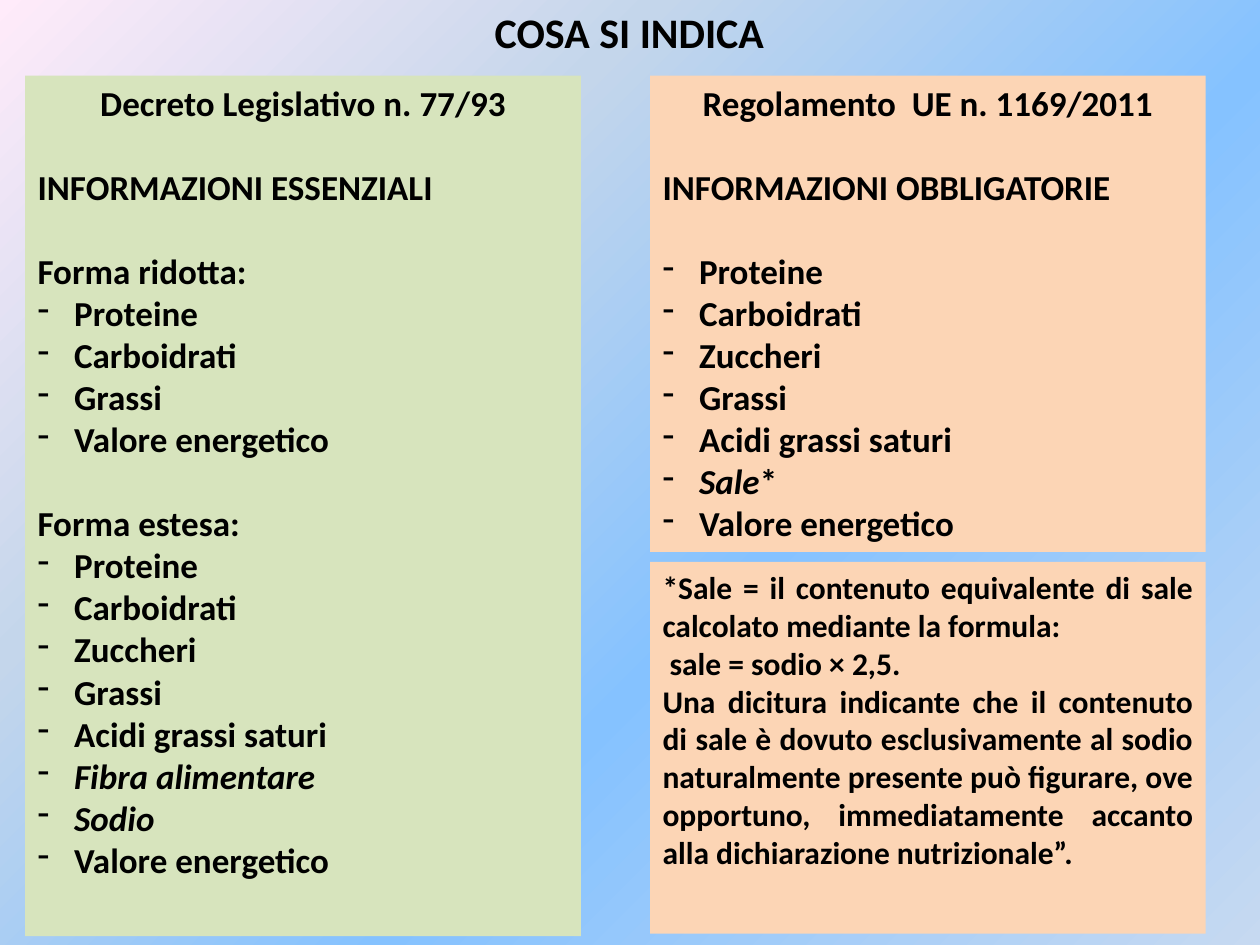
from lxml.etree import SubElement
from pptx import Presentation
from pptx.dml.color import RGBColor
from pptx.enum.shapes import MSO_SHAPE
from pptx.enum.text import MSO_ANCHOR, MSO_AUTO_SIZE, PP_ALIGN
from pptx.oxml import parse_xml
from pptx.oxml.ns import nsdecls, qn
from pptx.util import Inches, Pt

GREEN, ORANGE = "D7E4BD", "FCD5B5"
PANEL_WIDTH = 4.41
LEFT_X, RIGHT_X, TOP_Y = 0.2, 5.16, 0.6
LINE = 24  # height of one 20 pt text line, in points


def write(frame, text, size=20, align=PP_ALIGN.LEFT, bullet=False,
          italic=False, before=0, tail=""):
    """Add a bold paragraph; tail is an upright ending to the text."""
    paragraph = frame.paragraphs[0]
    if paragraph.runs:
        paragraph = frame.add_paragraph()
    paragraph.alignment = align
    paragraph.space_before = Pt(before)
    if bullet:
        properties = paragraph._p.get_or_add_pPr()
        properties.set("marL", str(Inches(0.29)))
        properties.set("indent", str(-Inches(0.29)))
        SubElement(properties, qn("a:buFontTx"))
        SubElement(properties, qn("a:buChar"), char="-")
    for part, slanted in ((text, italic), (tail, False)):
        if part:
            run = paragraph.add_run()
            run.text = part
            run.font.name = "Calibri"
            run.font.size = Pt(size)
            run.font.bold = True
            run.font.italic = slanted
            run.font.color.rgb = RGBColor.from_string("000000")


def add_panel(left, top, height, colour):
    panel = slide.shapes.add_shape(
        MSO_SHAPE.RECTANGLE, Inches(left), Inches(top),
        Inches(PANEL_WIDTH), Inches(height))
    panel.shadow.inherit = False
    panel.fill.solid()
    panel.fill.fore_color.rgb = RGBColor.from_string(colour)
    panel.line.fill.background()
    panel.text_frame.word_wrap = True
    panel.text_frame.vertical_anchor = MSO_ANCHOR.TOP
    return panel.text_frame


presentation = Presentation()
presentation.slide_width = Inches(10)
presentation.slide_height = Inches(7.5)
slide = presentation.slides.add_slide(presentation.slide_layouts[5])

# Background: radial gradient centred on the bottom right corner
background = parse_xml(f"""
<p:bg {nsdecls('p', 'a')}><p:bgPr>
  <a:gradFill rotWithShape="1">
    <a:gsLst>
      <a:gs pos="0"><a:srgbClr val="C6D9F1"><a:alpha val="36000"/></a:srgbClr></a:gs>
      <a:gs pos="40000"><a:srgbClr val="85C2FF"/></a:gs>
      <a:gs pos="70000"><a:srgbClr val="C4D6EB"/></a:gs>
      <a:gs pos="100000"><a:srgbClr val="FFEBFA"/></a:gs>
    </a:gsLst>
    <a:path path="circle"><a:fillToRect l="100000" t="100000"/></a:path>
  </a:gradFill>
  <a:effectLst/>
</p:bgPr></p:bg>""")
slide._element.cSld.insert(0, background)

# Title
title = slide.shapes.title
title.left, title.top = Inches(0.43), Inches(0)
title.width, title.height = Inches(9.13), Inches(0.5)
title.text_frame.auto_size = MSO_AUTO_SIZE.NONE
title.text_frame.vertical_anchor = MSO_ANCHOR.TOP
write(title.text_frame, "COSA SI INDICA", size=24, align=PP_ALIGN.CENTER)

# Old decree: short and extended forms
decree = add_panel(LEFT_X, TOP_Y, 6.83, GREEN)
write(decree, "Decreto Legislativo n. 77/93", align=PP_ALIGN.CENTER)
write(decree, "INFORMAZIONI ESSENZIALI", before=LINE)
forms = {
    "Forma ridotta:": ["Proteine", "Carboidrati", "Grassi", "Valore energetico"],
    "Forma estesa:": ["Proteine", "Carboidrati", "Zuccheri", "Grassi",
                      "Acidi grassi saturi", "Fibra alimentare", "Sodio",
                      "Valore energetico"],
}
for form, nutrients in forms.items():
    write(decree, form, before=LINE)
    for nutrient in nutrients:
        write(decree, nutrient, bullet=True,
              italic=nutrient in ("Fibra alimentare", "Sodio"))

# New regulation: mandatory items
regulation = add_panel(RIGHT_X, TOP_Y, 3.78, ORANGE)
write(regulation, "Regolamento  UE n. 1169/2011", align=PP_ALIGN.CENTER)
write(regulation, "INFORMAZIONI OBBLIGATORIE", before=LINE)
mandatory = ["Proteine", "Carboidrati", "Zuccheri", "Grassi",
             "Acidi grassi saturi", "Sale", "Valore energetico"]
for position, nutrient in enumerate(mandatory):
    is_salt = nutrient == "Sale"
    write(regulation, nutrient, bullet=True, italic=is_salt,
          tail="*" if is_salt else "", before=0 if position else LINE)

# Note on salt
salt_note = add_panel(RIGHT_X, 4.46, 2.95, ORANGE)
for sentence in (
    "*Sale = il contenuto equivalente di sale calcolato mediante la formula:",
    " sale = sodio × 2,5.",
    "Una dicitura indicante che il contenuto di sale è dovuto esclusivamente "
    "al sodio naturalmente presente può figurare, ove opportuno, "
    "immediatamente accanto alla dichiarazione nutrizionale”.",
):
    write(salt_note, sentence, size=18, align=PP_ALIGN.JUSTIFY)

presentation.save("out.pptx")
